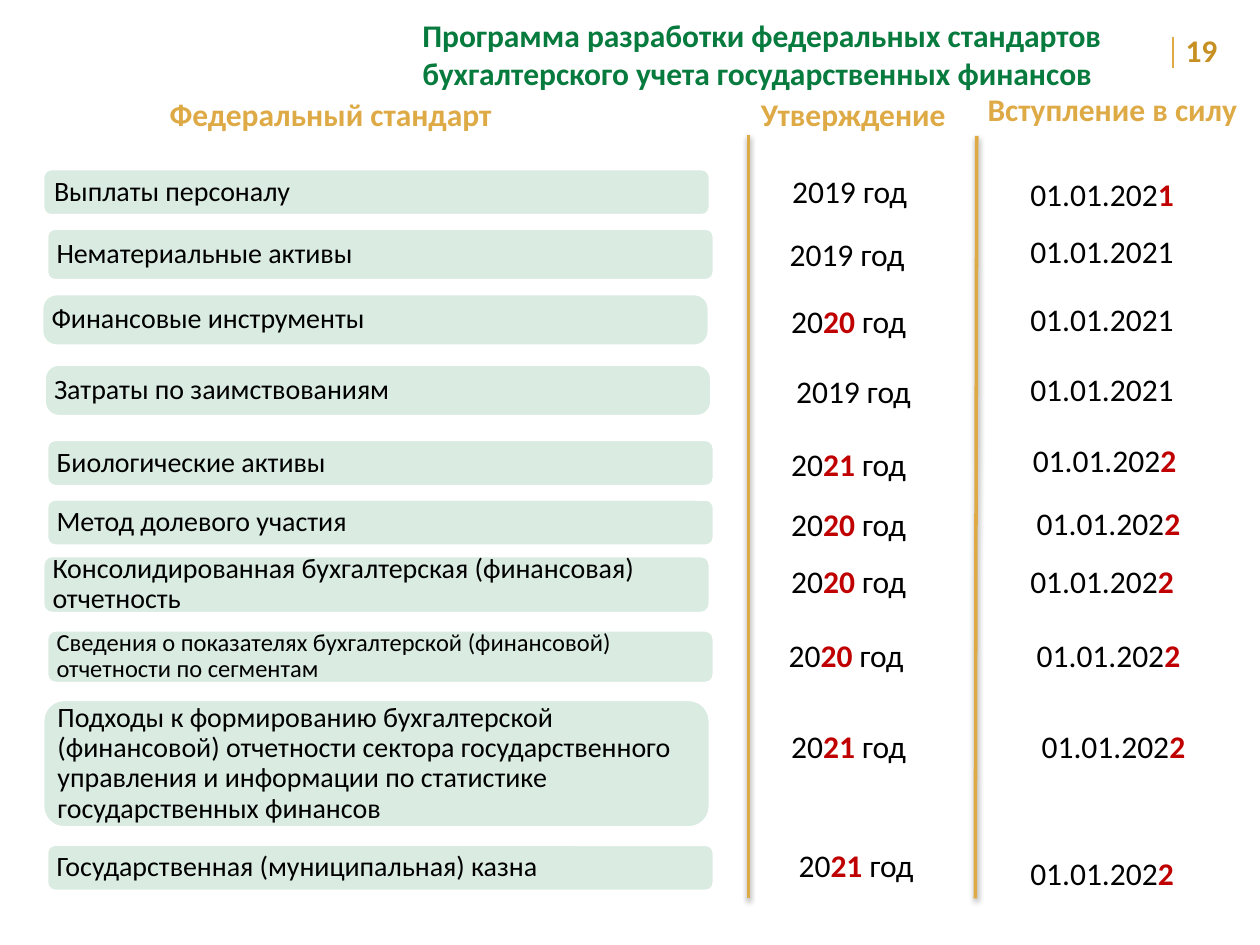
"""Build the slide with the programme of federal accounting standards."""
import pptx
import pptx.util
import pptx.dml.color
import pptx.enum.shapes
import pptx.enum.text
import pptx.oxml
import pptx.oxml.ns
from pptx.util import Cm

INK = {"green": "077A3E", "gold": "DEAA46", "ochre": "C79023",
       "red": "C00000", "black": "000000", "white": "FFFFFF"}
FONT = "Calibri"
TITLE = "Программа разработки федеральных стандартов бухгалтерского учета государственных финансов"
PAGE = "19"
HEADS = [("Федеральный стандарт", 3.17, 1.8, 7.16),
         ("Утверждение", 15.09, 1.8, 5.64),
         ("Вступление в силу", 19.66, 1.7, 5.64)]
# Each row: pill (text, left, top, height, radius, inset, size), year, date
ROWS = [
    (("Выплаты персоналу", 0.86, 3.4, 0.95, 0.17, 0.23, 16),
     ("2019 год", 15.72, 3.35), ("01.01.202|1", 20.52, 3.4)),
    (("Нематериальные активы", 0.94, 4.6, 1.06, 0.17, 0.2, 16),
     ("2019 год", 15.67, 4.62), ("01.01.2021", 20.52, 4.55)),
    (("Финансовые инструменты", 0.84, 5.92, 1.06, 0.3, 0.2, 16),
     ("20|20 |год", 15.7, 5.97), ("01.01.2021", 20.52, 5.92)),
    (("Затраты по заимствованиям", 0.89, 7.34, 1.06, 0.3, 0.2, 16),
     ("2019 год", 15.8, 7.37), ("01.01.2021", 20.52, 7.34)),
    (("Биологические активы", 0.94, 8.86, 0.95, 0.17, 0.2, 16),
     ("20|21 |год", 15.7, 8.84), ("01.01.202|2", 20.57, 8.76)),
    (("Метод долевого участия", 0.94, 10.06, 0.95, 0.17, 0.2, 16),
     ("20|20 |год", 15.7, 10.06), ("01.01.202|2", 20.65, 10.03)),
    (("Консолидированная бухгалтерская (финансовая) отчетность",
      0.86, 11.2, 1.17, 0.19, 0.2, 16),
     ("20|20 |год", 15.7, 11.2), ("01.01.202|2", 20.52, 11.2)),
    (("Сведения о показателях бухгалтерской (финансовой) отчетности по сегментам",
      0.94, 12.7, 1.08, 0.18, 0.2, 14),
     ("20|20 |год", 15.65, 12.7), ("01.01.202|2", 20.65, 12.7)),
    (("Подходы к формированию бухгалтерской (финансовой) отчетности сектора "
      "государственного управления и информации по статистике государственных финансов",
      0.86, 14.1, 2.59, 0.43, 0.3, 16),
     ("20|21 |год", 15.7, 14.53), ("01.01.202|2", 20.75, 14.53)),
    (("Государственная (муниципальная) казна", 0.94, 17.02, 0.95, 0.17, 0.2, 16),
     ("20|21 |год", 15.85, 16.94), ("01.01.202|2", 20.52, 17.09)),
]
PILL, YEAR, DATE, LINE = 13.46, 3.1, 3.66, 1.02
RULES = [((15.09, 2.72), (15.09, 18.11), 2, True),
         ((19.69, 2.74), (19.66, 18.11), 2, True),
         ((23.65, 0.74), (23.65, 1.37), 1, False)]
SHADE = ('<a:outerShdw blurRad="40000" dist="20000" dir="5400000" rotWithShape="0">'
         '<a:srgbClr val="000000"><a:alpha val="38000"/></a:srgbClr></a:outerShdw>')


def hue(name):
    return pptx.dml.color.RGBColor.from_string(INK[name])


def node(body):
    return pptx.oxml.parse_xml(body.replace(">", " " + pptx.oxml.ns.nsdecls("a") + ">", 1))


def write(shape, text, size=18, color="black", bold=False, anchor="TOP", space=None, inset=None):
    """Fill a shape with text; parts at odd places between bars are bold red."""
    frame = shape.text_frame
    frame.word_wrap = True
    frame.auto_size = pptx.enum.text.MSO_AUTO_SIZE.NONE
    frame.vertical_anchor = getattr(pptx.enum.text.MSO_ANCHOR, anchor)
    if inset is not None:
        frame.margin_left = frame.margin_right = Cm(inset)
        frame.margin_top = frame.margin_bottom = 0
    para = frame.paragraphs[0]
    para.alignment = pptx.enum.text.PP_ALIGN.LEFT
    if space:
        para.line_spacing = space
    for i, part in enumerate(text.split("|")):
        run = para.add_run()
        run.text = part
        font = run.font
        font.name, font.size = FONT, pptx.util.Pt(size)
        font.bold = bold or i % 2 == 1
        font.color.rgb = hue("red" if i % 2 else color)


def label(slide, text, left, top, width, **form):
    write(slide.shapes.add_textbox(Cm(left), Cm(top), Cm(width), Cm(LINE)), text, **form)


def pill(slide, text, left, top, height, radius, inset, size):
    kind = pptx.enum.shapes.MSO_SHAPE.ROUNDED_RECTANGLE
    shape = slide.shapes.add_shape(kind, Cm(left), Cm(top), Cm(PILL), Cm(height))
    shape.adjustments[0] = radius / height
    shape.shadow.inherit = False
    shape.fill.solid()
    shape.fill.fore_color.rgb = hue("green")
    tint = shape._element.spPr.find(".//" + pptx.oxml.ns.qn("a:srgbClr"))
    tint.append(node('<a:alpha val="15000"></a:alpha>'))
    shape.line.color.rgb = hue("white")
    shape.line.width = pptx.util.Pt(2)
    write(shape, text, size=size, anchor="MIDDLE", space=0.9, inset=inset - 0.29 * radius)


def rule(slide, start, end, width, shade):
    kind = pptx.enum.shapes.MSO_CONNECTOR.STRAIGHT
    line = slide.shapes.add_connector(kind, *map(Cm, start + end))
    line.line.color.rgb = hue("gold")
    line.line.width = pptx.util.Pt(width)
    line._element.spPr.append(node("<a:effectLst>" + (SHADE if shade else "") + "</a:effectLst>"))


def main():
    deck = pptx.Presentation()
    deck.slide_width, deck.slide_height = Cm(25.4), Cm(19.05)
    slide = deck.slides.add_slide(deck.slide_layouts[5])
    title = slide.shapes.title
    title.left, title.top, title.width, title.height = map(Cm, (8.26, 0.2, 14.22, 1.8))
    write(title, TITLE, color="green", bold=True)
    label(slide, PAGE, 23.65, 0.51, 1.75, color="ochre", bold=True)
    for head in HEADS:
        label(slide, *head, color="gold", bold=True)
    for item in RULES:
        rule(slide, *item)
    for name, year, date in ROWS:
        pill(slide, *name)
        label(slide, *year, YEAR)
        label(slide, *date, DATE)
    deck.save("out.pptx")


if __name__ == "__main__":
    main()
